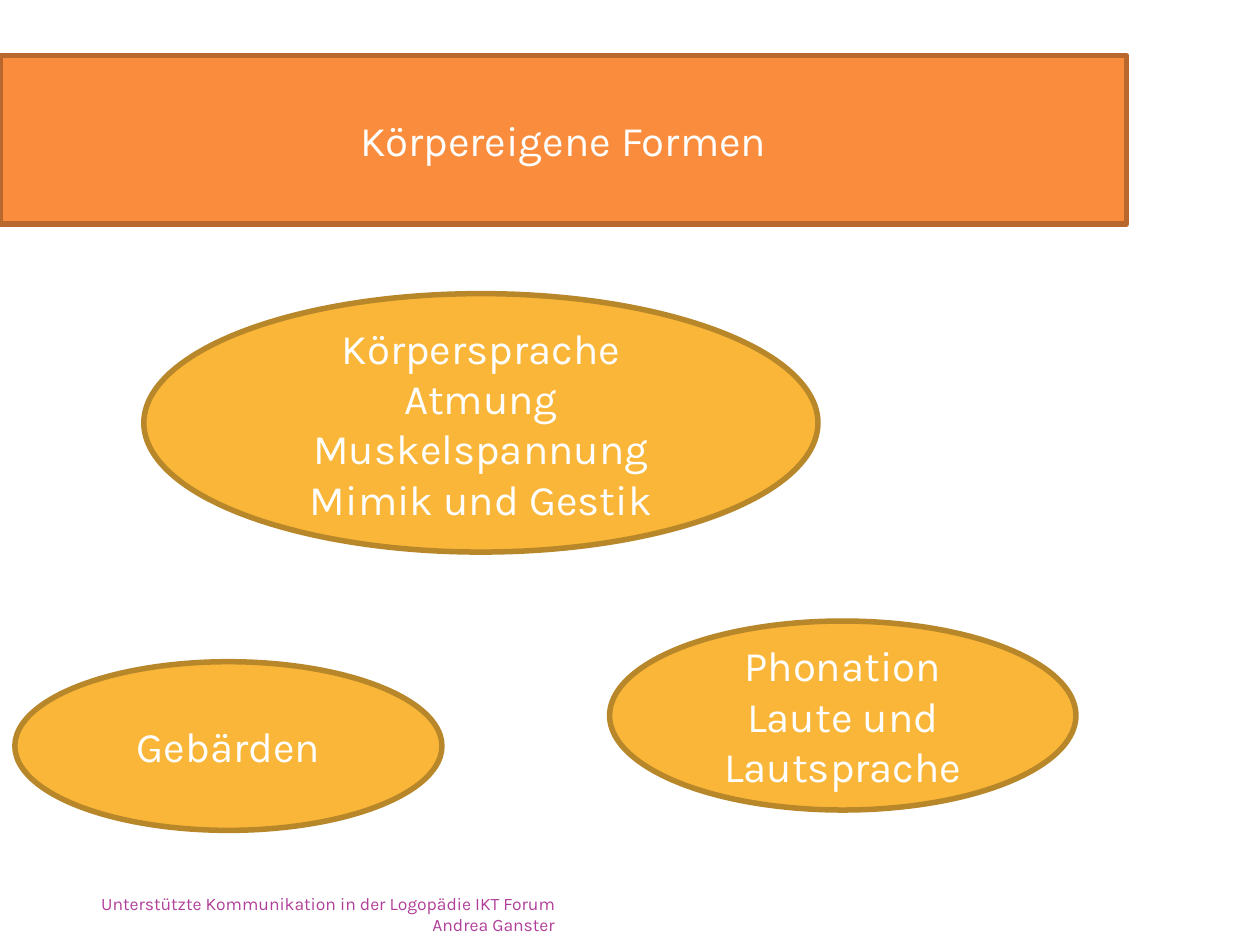
"""Build a slide on body-based forms of communication."""
from pptx import Presentation
from pptx.dml.color import RGBColor
from pptx.enum.shapes import MSO_SHAPE as Shape
from pptx.enum.text import MSO_ANCHOR as Anchor, PP_ALIGN as Align
from pptx.util import Cm, Pt

FONT = "Karla"
WHITE = RGBColor(0xFF, 0xFF, 0xFF)
ORANGE = RGBColor(0xFA, 0x8D, 0x3D)
DARK_ORANGE = RGBColor(0xB9, 0x68, 0x2D)
YELLOW = RGBColor(0xF9, 0xB6, 0x39)
DARK_YELLOW = RGBColor(0xB8, 0x87, 0x2A)
PURPLE = RGBColor(0xB1, 0x3F, 0x9A)

BUBBLES = [
    ("Körpersprache\nAtmung\nMuskelspannung\nMimik und Gestik", (2.9, 5.92, 13.59, 5.21)),
    ("Gebärden", (0.3, 13.34, 8.61, 3.4)),
    ("Phonation\nLaute und Lautsprache", (12.29, 12.52, 9.4, 3.81)),
]


def write_text(shape, text, size, color, align, anchor):
    frame = shape.text_frame
    frame.word_wrap = True
    frame.vertical_anchor = anchor
    frame.text = text
    for para in frame.paragraphs:
        para.alignment = align
        for span in para.runs:
            span.font.name = FONT
            span.font.size = Pt(size)
            span.font.color.rgb = color


def add_label(page, kind, text, place, fill, line):
    shape = page.shapes.add_shape(kind, *map(Cm, place))
    shape.shadow.inherit = False
    shape.fill.solid()
    shape.fill.fore_color.rgb = fill
    shape.line.color.rgb = line
    shape.line.width = Pt(3.15)
    write_text(shape, text, 24, WHITE, Align.CENTER, Anchor.MIDDLE)


def add_footer(page, text, place):
    box = page.shapes.add_textbox(*map(Cm, place))
    box.text_frame.margin_top = box.text_frame.margin_bottom = 0
    write_text(box, text, 10, PURPLE, Align.RIGHT, Anchor.BOTTOM)


def main():
    deck = Presentation()
    deck.slide_width, deck.slide_height = Cm(25.4), Cm(19.05)
    page = deck.slides.add_slide(deck.slide_layouts[6])
    add_label(page, Shape.RECTANGLE, "Körpereigene Formen",
              (0, 1.12, 22.71, 3.4), ORANGE, DARK_ORANGE)
    for text, place in BUBBLES:
        add_label(page, Shape.OVAL, text, place, YELLOW, DARK_YELLOW)
    add_footer(page, "Unterstützte Kommunikation in der Logopädie IKT Forum Andrea Ganster",
               (1.27, 18.21, 10.16, 0.64))
    deck.save("out.pptx")


if __name__ == "__main__":
    main()
